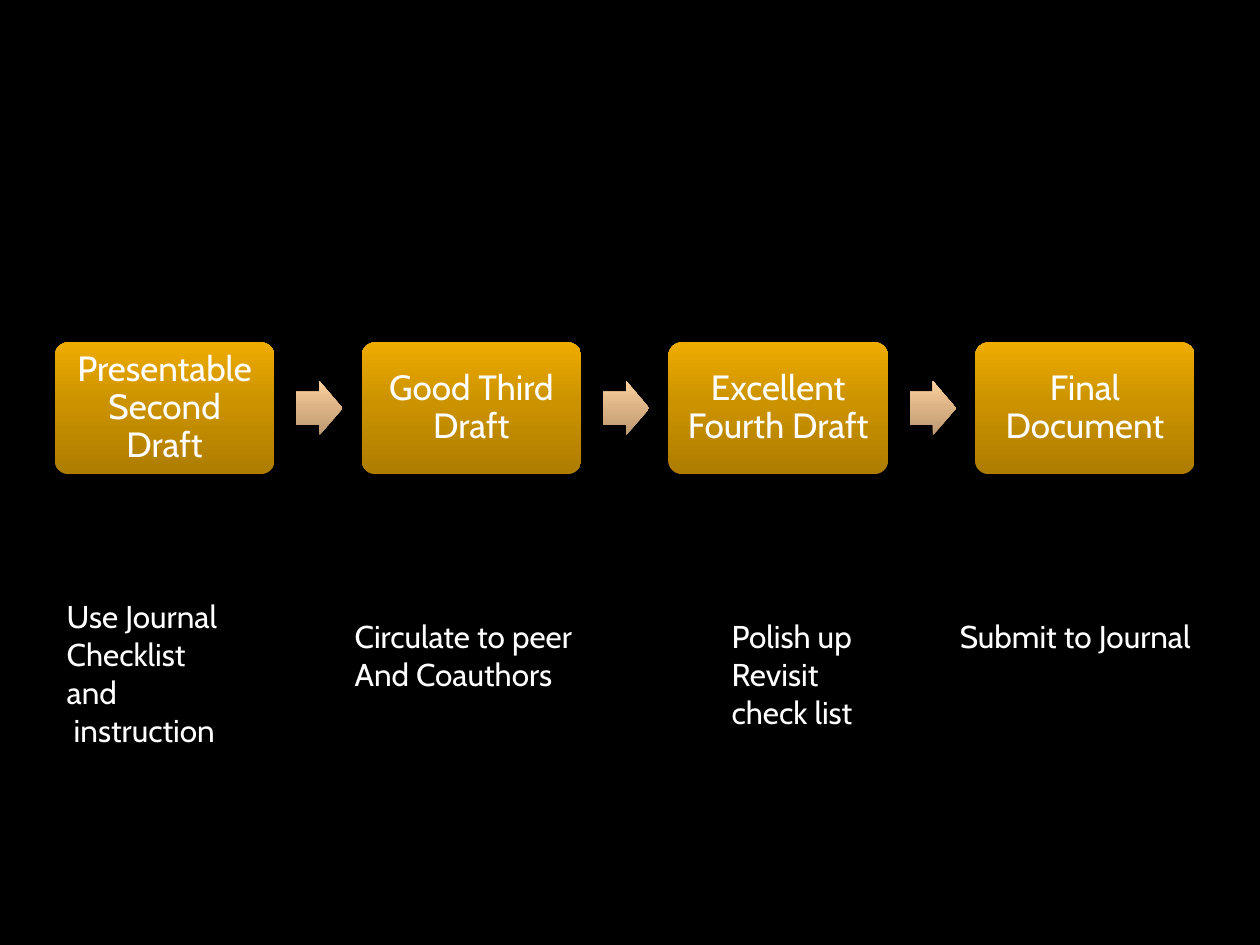
from copy import deepcopy

from pptx import Presentation
from pptx import util as u
from pptx.dml.color import RGBColor
from pptx.enum import shapes, text
from pptx.oxml.ns import qn

BLACK = RGBColor(0x00, 0x00, 0x00)
WHITE = RGBColor(0xFF, 0xFF, 0xFF)
GOLD = [RGBColor(0xAE, 0x7D, 0x00), RGBColor(0xCC, 0x93, 0x00), RGBColor(0xEE, 0xAB, 0x00)]
TAN = [RGBColor(0xBC, 0x99, 0x72), RGBColor(0xDD, 0xB4, 0x86), RGBColor(0xFF, 0xD2, 0x9F)]
STOPS = [0, 0.55, 1]

LEFT, PITCH, MIDDLE = 31.4, 175.3, 233.3
BOX_W, BOX_H = 125.4, 75.2
ARROW_W, ARROW_H, ARROW_GAP = 26.6, 31.1, 12.4

STEPS = ["Presentable Second Draft", "Good Third Draft",
         "Excellent Fourth Draft", "Final Document"]
# left, top, width, height, lines, wrap
NOTES = [
    (31, 337.7, 114.5, 94, ["Use Journal", "Checklist\vand", " instruction"], False),
    (195.6, 349.2, 139, 51, ["Circulate to peer", "And Coauthors"], False),
    (411, 349.2, 96.5, 72.7, ["Polish up", "Revisit", "check list"], True),
    (541.4, 349.2, 147, 29, ["Submit to Journal"], False),
]


def assign(item, values):
    for name, value in values.items():
        setattr(item, name, value)


class Deck:
    font = "Cabin"

    def __init__(self, slide):
        self.slide = slide
        fill = slide.background.fill
        fill.solid()
        fill.fore_color.rgb = BLACK

    def label(self, frame, lines, size, layout):
        frame.text = "\n".join(lines)
        for par in frame.paragraphs:
            assign(par, layout)
            assign(par.font, {"name": self.font, "size": u.Pt(size)})
            par.font.color.rgb = WHITE

    def shade(self, shape, colors):
        """Fill with a three-stop gradient, first colour at the bottom."""
        fill = shape.fill
        fill.gradient()
        fill.gradient_angle = 90
        stops = shape._element.spPr.find(qn("a:gradFill")).find(qn("a:gsLst"))
        stops.insert(1, deepcopy(stops[0]))
        for stop, place, color in zip(fill.gradient_stops, STOPS, colors):
            stop.position = place
            stop.color.rgb = color

    def shape(self, kind, left, width, height, adjust, colors):
        """Add a borderless shape centred on the row's middle line."""
        item = self.slide.shapes.add_shape(
            kind, u.Pt(left), u.Pt(MIDDLE - height / 2), u.Pt(width), u.Pt(height))
        for i, value in enumerate(adjust):
            item.adjustments[i] = value
        item.shadow.inherit = False
        item.line.fill.background()
        self.shade(item, colors)
        return item

    def step(self, left, words):
        box = self.shape(shapes.MSO_SHAPE.ROUNDED_RECTANGLE, left, BOX_W, BOX_H, [0.1], GOLD)
        sides = ("left", "right", "top", "bottom")
        assign(box.text_frame, {f"margin_{side}": u.Pt(8) for side in sides})
        assign(box.text_frame, {"word_wrap": True, "vertical_anchor": text.MSO_ANCHOR.MIDDLE})
        self.label(box.text_frame, [words], 20,
                   {"alignment": text.PP_ALIGN.CENTER, "line_spacing": 0.9})

    def arrow(self, left):
        self.shape(shapes.MSO_SHAPE.RIGHT_ARROW, left, ARROW_W, ARROW_H, [0.6, 0.5], TAN)

    def note(self, left, top, width, height, lines, wrap):
        box = self.slide.shapes.add_textbox(u.Pt(left), u.Pt(top), u.Pt(width), u.Pt(height))
        assign(box.text_frame, {"word_wrap": wrap,
                                "auto_size": text.MSO_AUTO_SIZE.SHAPE_TO_FIT_TEXT})
        self.label(box.text_frame, lines, 18, {"alignment": text.PP_ALIGN.LEFT})


def main():
    show = Presentation()
    assign(show, {"slide_width": u.Pt(720), "slide_height": u.Pt(540)})
    blank = show.slide_layouts[6]
    deck = Deck(show.slides.add_slide(blank))
    for i, words in enumerate(STEPS):
        left = LEFT + i * PITCH
        deck.step(left, words)
        if i < len(STEPS) - 1:
            deck.arrow(left + BOX_W + ARROW_GAP)
    for note in NOTES:
        deck.note(*note)
    show.save("out.pptx")


if __name__ == "__main__":
    main()
